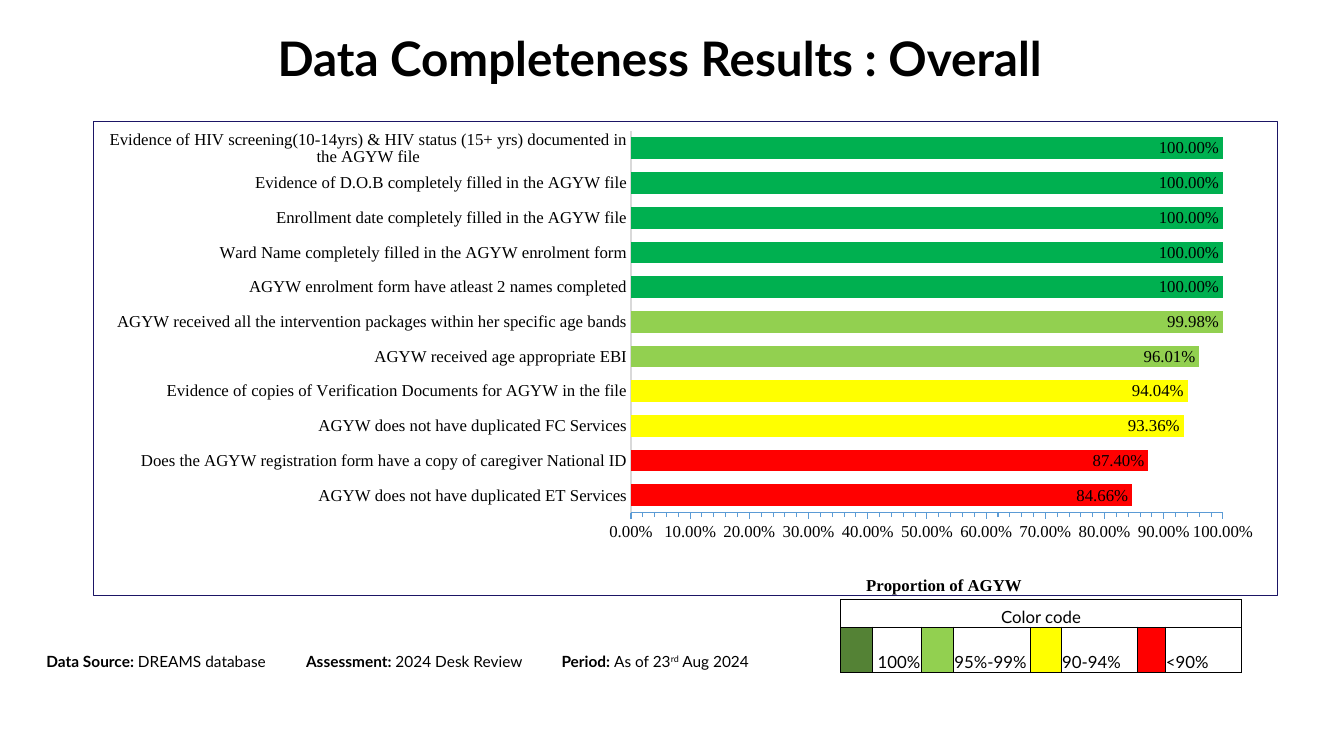
from dataclasses import dataclass

from lxml import etree
from pptx import Presentation
from pptx.chart.data import CategoryChartData
from pptx.dml.color import RGBColor
from pptx.enum.chart import XL_CHART_TYPE, XL_LABEL_POSITION, XL_TICK_MARK
from pptx.enum.text import MSO_ANCHOR, PP_ALIGN
from pptx.oxml import parse_xml
from pptx.oxml.ns import nsdecls, qn
from pptx.util import Pt


@dataclass(frozen=True)
class Theme:
    font: str = "Lato"
    chart_font: str = "Times New Roman"
    title_size: float = 34
    body_size: float = 12
    footer_size: float = 11
    black: str = "000000"
    frame: str = "1B1565"
    category_line: str = "D9D9D9"
    value_line: str = "5B9BD5"
    full: str = "00B050"
    full_key: str = "548235"
    high: str = "92D050"
    medium: str = "FFFF00"
    low: str = "FF0000"


THEME = Theme()

RESULTS = [
    ("AGYW does not have duplicated ET Services", 0.8466),
    ("Does the AGYW registration form have a copy of caregiver National ID", 0.874),
    ("AGYW does not have duplicated FC Services", 0.9336),
    ("Evidence of copies of Verification Documents for AGYW in the file", 0.9404),
    ("AGYW received age appropriate EBI", 0.9601),
    ("AGYW received all the intervention packages within her specific age bands", 0.9998),
    ("AGYW enrolment form have atleast 2 names completed", 1),
    ("Ward Name completely filled in the AGYW enrolment form", 1),
    ("Enrollment date completely filled in the AGYW file", 1),
    ("Evidence of D.O.B completely filled in the AGYW file", 1),
    ("Evidence of HIV screening(10-14yrs) & HIV status (15+ yrs) documented in the AGYW file", 1),
]

# Swatch colour, label, label alignment, swatch width, label width
COLOR_KEY = [
    (THEME.full_key, "100%", PP_ALIGN.RIGHT, 22.3, 35.3),
    (THEME.high, "95%-99%", PP_ALIGN.LEFT, 23, 54.7),
    (THEME.medium, "90-94%", PP_ALIGN.LEFT, 22.3, 54.7),
    (THEME.low, "<90%", PP_ALIGN.LEFT, 19.4, 54.7),
]


def rgb(color):
    return RGBColor.from_string(color)


def style_font(font, size=THEME.body_size, name=THEME.font, bold=False):
    font.name, font.size, font.bold = name, Pt(size), bold
    font.color.rgb = rgb(THEME.black)


def add_span(para, text, baseline=0, **style):
    span = para.add_run()
    span.text = text
    style_font(span.font, **style)
    if baseline:
        span.font._element.set("baseline", str(baseline))


def write(frame, spans, align=PP_ALIGN.LEFT, anchor=MSO_ANCHOR.TOP, tabs=(), spacing=None, **style):
    """Fill a frame's first paragraph from (text, extra format) pairs."""
    frame.vertical_anchor = anchor
    para = frame.paragraphs[0]
    if tabs:
        stops = etree.SubElement(para._p.get_or_add_pPr(), qn("a:tabLst"))
        for position in tabs:
            etree.SubElement(stops, qn("a:tab"), pos=str(Pt(position)), algn="l")
    para.alignment = align
    para.line_spacing = spacing
    for text, extra in spans:
        add_span(para, text, **{**style, **extra})


def add_text(page, spans, left, top, width, height, **layout):
    box = page.shapes.add_textbox(Pt(left), Pt(top), Pt(width), Pt(height))
    frame = box.text_frame
    frame.word_wrap = True
    frame.margin_left = frame.margin_right = frame.margin_top = frame.margin_bottom = 0
    write(frame, spans, **layout)


def band_color(value):
    if value >= 1:
        return THEME.full
    if value >= 0.95:
        return THEME.high
    return THEME.medium if value >= 0.9 else THEME.low


def place(element, **fractions):
    """Give a plot area or axis title a fixed place in fractions of the chart."""
    for old in element.findall(qn("c:layout")):
        element.remove(old)
    target = '<c:layoutTarget val="inner"/>' if "w" in fractions else ""
    modes = "".join(f'<c:{key}Mode val="edge"/>' for key in "xy")
    sizes = "".join(f'<c:{key} val="{value}"/>' for key, value in fractions.items())
    layout = parse_xml(
        f'<c:layout {nsdecls("c")}><c:manualLayout>{target}{modes}{sizes}</c:manualLayout></c:layout>')
    text = element.find(qn("c:tx"))
    element.insert(0 if text is None else 1, layout)


def frame_chart(chart):
    border = parse_xml(
        f'<c:spPr {nsdecls("c", "a")}><a:noFill/><a:ln w="{Pt(0.75)}"><a:solidFill>'
        f'<a:srgbClr val="{THEME.frame}"/></a:solidFill></a:ln></c:spPr>')
    chart._chartSpace.find(qn("c:chart")).addnext(border)


def style_axis(axis, color, major, minor):
    axis.has_major_gridlines = False
    axis.major_tick_mark, axis.minor_tick_mark = major, minor
    axis.format.line.color.rgb = rgb(color)
    axis.format.line.width = Pt(0.75)
    style_font(axis.tick_labels.font, name=THEME.chart_font)


def add_results_chart(page):
    data = CategoryChartData(number_format="0.00%")
    data.categories = [name for name, _ in RESULTS]
    data.add_series("Series 1", [value for _, value in RESULTS])
    chart = page.shapes.add_chart(
        XL_CHART_TYPE.BAR_CLUSTERED, Pt(66.4), Pt(86.4), Pt(846.5), Pt(342), data).chart
    chart.has_legend = chart.has_title = False
    style_font(chart.font, name=THEME.chart_font)
    frame_chart(chart)

    style_axis(chart.category_axis, THEME.category_line, XL_TICK_MARK.NONE, XL_TICK_MARK.NONE)
    axis = chart.value_axis
    style_axis(axis, THEME.value_line, XL_TICK_MARK.OUTSIDE, XL_TICK_MARK.OUTSIDE)
    axis.minimum_scale, axis.maximum_scale = 0, 1
    axis.major_unit, axis.minor_unit = 0.1, 0.02
    axis.tick_labels.number_format = "0.00%"
    axis.tick_labels.number_format_is_linked = False
    write(axis.axis_title.text_frame, [("Proportion of AGYW", {})],
          align=PP_ALIGN.CENTER, name=THEME.chart_font, bold=True)
    place(axis.axis_title._element, x=0.65, y=0.95)
    place(chart._chartSpace.chart.plotArea, x=0.454, y=0.02, w=0.5, h=0.805)

    plot = chart.plots[0]
    plot.gap_width, plot.vary_by_categories = 60, False
    plot.has_data_labels = True
    labels = plot.data_labels
    labels.show_value, labels.position = True, XL_LABEL_POSITION.INSIDE_END
    labels.number_format, labels.number_format_is_linked = "0.00%", False
    style_font(labels.font, name=THEME.chart_font)
    series = plot.series[0]
    series.format.fill.solid()
    series.format.fill.fore_color.rgb = rgb(THEME.full)
    for index, (_, value) in enumerate(RESULTS):
        if value < 1:
            fill = series.points[index].format.fill
            fill.solid()
            fill.fore_color.rgb = rgb(band_color(value))


def style_cell(cell, color=None):
    cell.margin_left = cell.margin_right = cell.margin_top = Pt(0.7)
    cell.margin_bottom = 0
    for side in ("lnL", "lnR", "lnT", "lnB"):
        cell._tc.get_or_add_tcPr().append(parse_xml(
            f'<a:{side} {nsdecls("a")} w="{Pt(0.5)}"><a:solidFill>'
            f'<a:srgbClr val="{THEME.black}"/></a:solidFill></a:{side}>'))
    if color:
        cell.fill.solid()
        cell.fill.fore_color.rgb = rgb(color)
    else:
        cell.fill.background()


def write_cell(cell, text, align):
    write(cell.text_frame, [(text, {})], align=align)
    cell.vertical_anchor = MSO_ANCHOR.BOTTOM


def add_color_key(page):
    widths = [width for entry in COLOR_KEY for width in entry[3:]]
    table = page.shapes.add_table(
        2, len(widths), Pt(600.5), Pt(428.4), Pt(sum(widths)), Pt(51.8)).table
    table.first_row = table.horz_banding = False
    for column, width in zip(table.columns, widths):
        column.width = Pt(width)
    table.rows[0].height, table.rows[1].height = Pt(19.4), Pt(32.4)
    for index in range(len(widths)):
        style_cell(table.cell(0, index))
    table.cell(0, 0).merge(table.cell(0, len(widths) - 1))
    write_cell(table.cell(0, 0), "Color code", PP_ALIGN.CENTER)
    for index, (color, label, align, *_) in enumerate(COLOR_KEY):
        style_cell(table.cell(1, 2 * index), color)
        style_cell(table.cell(1, 2 * index + 1))
        write_cell(table.cell(1, 2 * index + 1), label, align)


def main():
    deck = Presentation()
    deck.slide_width, deck.slide_height = Pt(960), Pt(540)
    page = deck.slides.add_slide(deck.slide_layouts[6])
    add_results_chart(page)
    add_text(page, [("Data Completeness Results : Overall", {})], 95, 23, 752.4, 41,
             align=PP_ALIGN.CENTER, anchor=MSO_ANCHOR.MIDDLE, spacing=0.9,
             size=THEME.title_size, bold=True)
    strong = {"bold": True}
    add_text(page, [("Data Source: ", strong), ("DREAMS database\t", {}),
                    ("Assessment: ", strong), ("2024 Desk Review\t", {}),
                    ("Period: ", strong), ("As of 23", {}),
                    ("rd", {"baseline": 30000}), (" Aug 2024", {})],
             33.1, 465.8, 529.2, 27.4, tabs=(185.5, 368), size=THEME.footer_size)
    add_color_key(page)
    deck.save("out.pptx")


if __name__ == "__main__":
    main()
